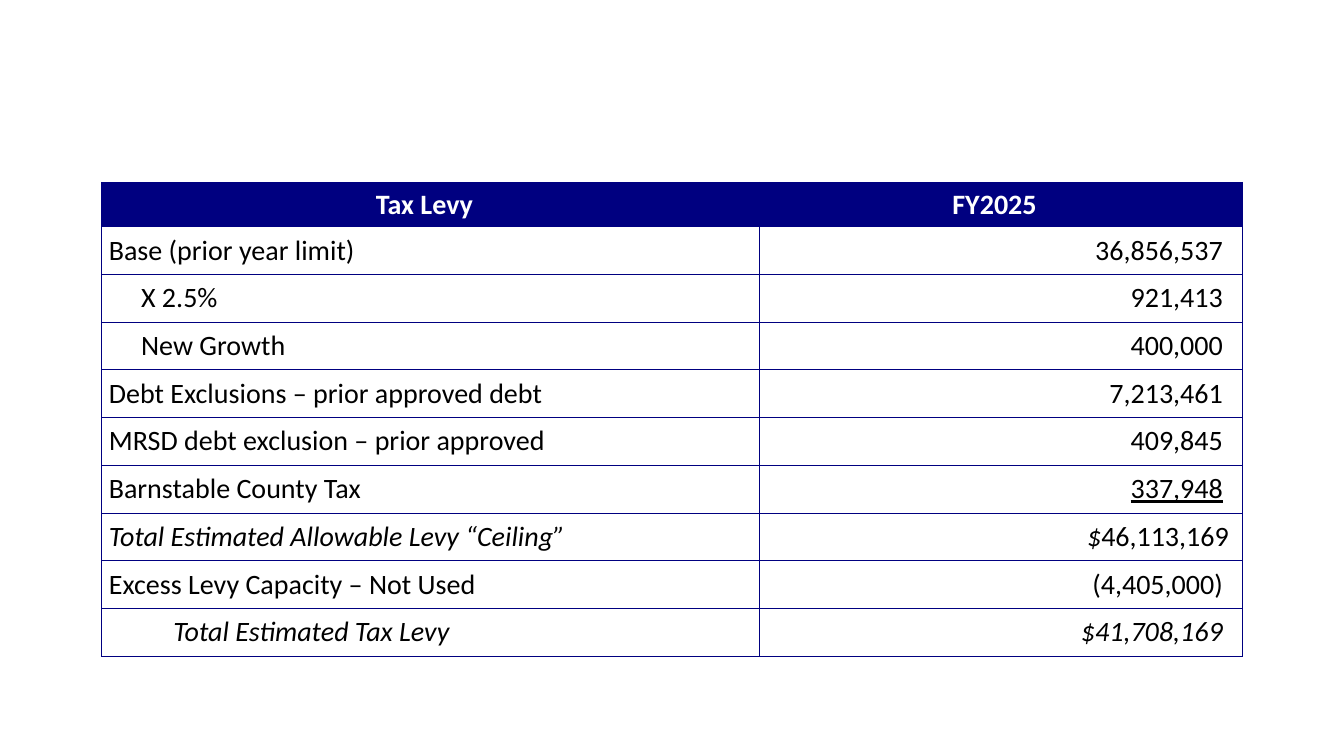
from dataclasses import dataclass

from lxml.etree import SubElement
from pptx import Presentation
from pptx.dml.color import RGBColor
from pptx.enum.text import MSO_ANCHOR, PP_ALIGN
from pptx.oxml.ns import qn
from pptx.util import Inches, Pt


@dataclass(frozen=True)
class Theme:
    navy: RGBColor = RGBColor(0x00, 0x00, 0x80)
    white: RGBColor = RGBColor(0xFF, 0xFF, 0xFF)
    black: RGBColor = RGBColor(0x00, 0x00, 0x00)
    font: str = "Calibri"
    text_size: Pt = Pt(20)
    border: Pt = Pt(0.75)


theme = Theme()

COLUMN_WIDTHS = (6.52, 4.79)
TABLE_HEIGHT = 4.7
HEADER_HEIGHT = 0.44
SIDE_MARGIN, END_MARGIN, CEILING_END_MARGIN = 0.07, 0.19, 0.13
INDENT = 0.32

# Label, indent level, amount
LEVY_ROWS = [
    ("Tax Levy", 0, "FY2025"),
    ("Base (prior year limit)", 0, "36,856,537"),
    ("X 2.5%", 1, "921,413"),
    ("New Growth", 1, "400,000"),
    ("Debt Exclusions – prior approved debt", 0, "7,213,461"),
    ("MRSD debt exclusion – prior approved", 0, "409,845"),
    ("Barnstable County Tax", 0, "337,948"),
    ("Total Estimated Allowable Levy “Ceiling”", 0, "$46,113,169"),
    ("Excess Levy Capacity – Not Used", 0, "(4,405,000)"),
    ("Total Estimated Tax Levy", 2, "$41,708,169"),
]
COUNTY_TAX_ROW, CEILING_ROW, TOTAL_ROW = 6, 7, 9


def add_borders(cell):
    properties = cell._tc.get_or_add_tcPr()
    for side in ("a:lnL", "a:lnR", "a:lnT", "a:lnB"):
        line = SubElement(properties, qn(side), w=str(theme.border))
        fill = SubElement(line, qn("a:solidFill"))
        SubElement(fill, qn("a:srgbClr"), val=str(theme.navy))


def format_cell(cell, is_header, alignment):
    """Apply the borders, fill, margins and font shared by all cells."""
    add_borders(cell)
    if is_header:
        cell.fill.solid()
        cell.fill.fore_color.rgb = theme.navy
    else:
        cell.fill.background()
    cell.vertical_anchor = MSO_ANCHOR.MIDDLE
    cell.margin_left, cell.margin_right = Inches(SIDE_MARGIN), Inches(END_MARGIN)
    cell.margin_top = cell.margin_bottom = Inches(0.03)
    paragraph = cell.text_frame.paragraphs[0]
    paragraph.alignment = PP_ALIGN.CENTER if is_header else alignment
    for run in paragraph.runs:
        run.font.name = theme.font
        run.font.size = theme.text_size
        run.font.bold = is_header
        run.font.color.rgb = theme.white if is_header else theme.black


presentation = Presentation()
presentation.slide_width = Inches(13.33)
presentation.slide_height = Inches(7.5)
slide = presentation.slides.add_slide(presentation.slide_layouts[6])

table = slide.shapes.add_table(
    len(LEVY_ROWS), len(COLUMN_WIDTHS),
    Inches(1.01), Inches(1.81), Inches(sum(COLUMN_WIDTHS)), Inches(TABLE_HEIGHT),
).table
table.first_row = table.horz_banding = False
for column, width in zip(table.columns, COLUMN_WIDTHS):
    column.width = Inches(width)
body_height = (TABLE_HEIGHT - HEADER_HEIGHT) / (len(LEVY_ROWS) - 1)

for index, (label, level, amount) in enumerate(LEVY_ROWS):
    is_header = index == 0
    table.rows[index].height = Inches(HEADER_HEIGHT if is_header else body_height)
    label_cell, amount_cell = table.cell(index, 0), table.cell(index, 1)
    label_cell.text = label
    if index == CEILING_ROW:
        for text in (amount[0], amount[1:]):
            amount_cell.text_frame.paragraphs[0].add_run().text = text
    else:
        amount_cell.text = amount
    format_cell(label_cell, is_header, PP_ALIGN.LEFT)
    format_cell(amount_cell, is_header, PP_ALIGN.RIGHT)
    label_cell.margin_left = Inches(SIDE_MARGIN + INDENT * level)

    if index == COUNTY_TAX_ROW:
        amount_cell.text_frame.paragraphs[0].runs[0].font.underline = True
    if index == CEILING_ROW:
        amount_cell.margin_right = Inches(CEILING_END_MARGIN)
    if index in (CEILING_ROW, TOTAL_ROW):
        for cell in (label_cell, amount_cell):
            cell.text_frame.paragraphs[0].runs[0].font.italic = True

presentation.save("out.pptx")
